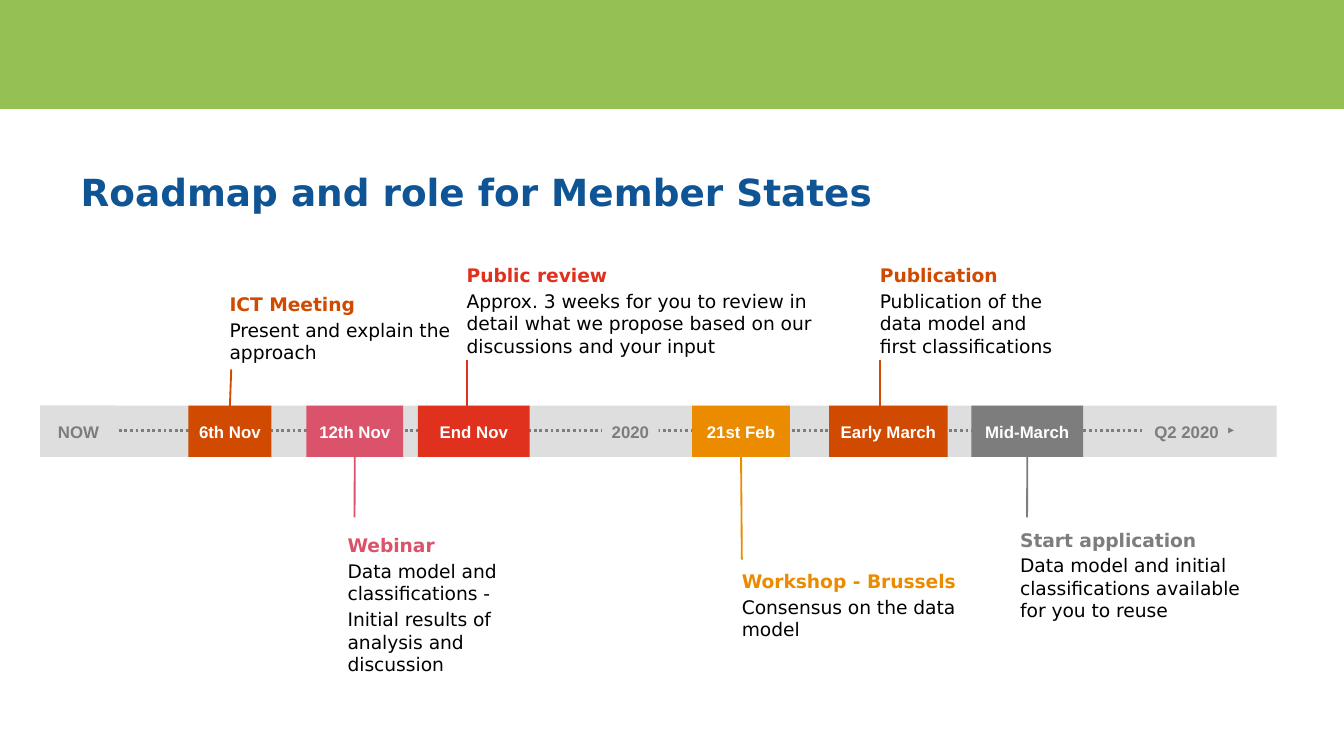
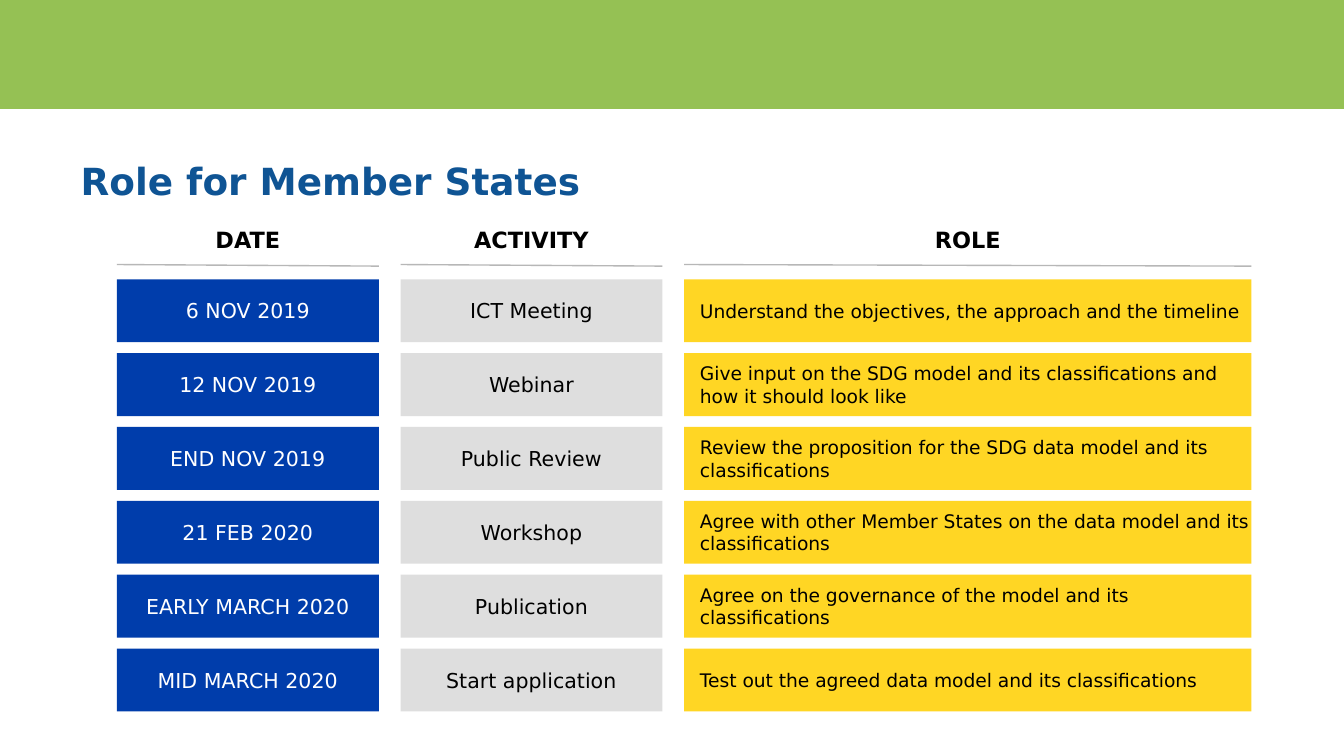
from collections import namedtuple

from lxml import etree
from pptx import Presentation
from pptx.dml.color import RGBColor
from pptx.enum import dml, shapes, text
from pptx.oxml import ns
from pptx.util import Cm, Pt

Box = namedtuple("Box", "left top width height")
Milestone = namedtuple("Milestone", "date left width colour stem tip heading lines note")

GREEN, TITLE_BLUE, NAVY, YELLOW = "95C154", "0F5494", "003DAB", "FFD624"
PALE, GREY, RULE, BLACK, WHITE = "DEDEDE", "7D7D7D", "B7B7B7", "000000", "FFFFFF"
ORANGE, PINK, RED, AMBER = "D04A02", "DB536A", "E0301E", "EB8C00"
BODY_FONT, DATE_FONT = "DejaVu Sans", "Arial"
LEFT, CENTER = text.PP_ALIGN.LEFT, text.PP_ALIGN.CENTER

PERIODS = [("NOW", 0, 1.45, 0), ("2020", 10.62, 1.07, 0.16), ("Q2 2020", 20.88, 1.57, 0.16)]

# Lengths in cm; stems, tips and notes are placed from the slide's corner.
MILESTONES = [
    Milestone("6th Nov", 3.56, 1.57, ORANGE, 4.37, 6.98, "ICT Meeting",
              ["Present and explain the approach"], Box(4.34, 5.54, 4.19, 1.17)),
    Milestone("12th Nov", 5.79, 1.83, PINK, 6.7, 9.78, "Webinar",
              ["Data model and classifications -",
               "Initial results of analysis and discussion"], Box(6.57, 10.1, 3.45, 2.31)),
    Milestone("End Nov", 7.9, 2.11, RED, 8.82, 6.81, "Public review",
              ["Approx. 3 weeks for you to review in detail what we propose "
               "based on our discussions and your input"], Box(8.82, 4.99, 6.6, 1.95)),
    Milestone("21st Feb", 13.08, 1.85, AMBER, 14.02, 10.58, "Workshop - Brussels",
              ["Consensus on the data model"], Box(14.02, 10.77, 4.34, 2.31)),
    Milestone("Early March", 15.67, 2.24, ORANGE, 16.63, 6.81, "Publication",
              ["Publication of the data model and first classifications"],
              Box(16.63, 4.99, 3.45, 1.55)),
    Milestone("Mid-March", 18.36, 2.11, GREY, 19.41, 9.78, "Start application",
              ["Data model and initial classifications available for you to reuse"],
              Box(19.28, 9.99, 4.52, 2.31)),
]

ROLES = [
    ("6 NOV 2019", "ICT Meeting", "Understand the objectives, the approach and the timeline"),
    ("12 NOV 2019", "Webinar",
     "Give input on the SDG model and its classifications and how it should look like"),
    ("END NOV 2019", "Public Review",
     "Review the proposition for the SDG data model and its classifications"),
    ("21 FEB 2020", "Workshop",
     "Agree with other Member States on the data model and its classifications"),
    ("EARLY MARCH 2020", "Publication",
     "Agree on the governance of the model and its classifications"),
    ("MID MARCH 2020", "Start application",
     "Test out the agreed data model and its classifications"),
]


def rgb(colour):
    return RGBColor.from_string(colour)


def lengths(box):
    return [Cm(value) for value in box]


def style(para, size, colour, bold=False, font=BODY_FONT, align=LEFT):
    para.alignment = align
    para.font.name, para.font.size, para.font.bold = font, Pt(size), bold
    para.font.color.rgb = rgb(colour)


def prepare_frame(frame, anchor, inset=0):
    """Wrap the text, anchor it and remove margins except the left inset."""
    frame.word_wrap = True
    frame.vertical_anchor = anchor
    frame.margin_left = Cm(inset)
    frame.margin_right = frame.margin_top = frame.margin_bottom = 0


def add_block(page, box, fill):
    block = page.shapes.add_shape(shapes.MSO_SHAPE.RECTANGLE, *lengths(box))
    block.shadow.inherit = False
    block.fill.solid()
    block.fill.fore_color.rgb = rgb(fill)
    block.line.fill.background()
    return block


def add_label(page, box, fill, words, size, colour, inset=0, **options):
    """A rectangle with one paragraph; without a fill, a text box."""
    label = add_block(page, box, fill) if fill else page.shapes.add_textbox(*lengths(box))
    prepare_frame(label.text_frame, text.MSO_ANCHOR.MIDDLE, inset)
    para = label.text_frame.paragraphs[0]
    para.text = words
    style(para, size, colour, **options)
    return label


def add_line(page, start, end, colour, width):
    line = page.shapes.add_connector(shapes.MSO_CONNECTOR.STRAIGHT, *lengths(start + end))
    line.line.color.rgb = rgb(colour)
    line.line.width = Pt(width)
    etree.SubElement(line.element.spPr, ns.qn("a:effectLst"))
    return line


def add_page(deck, title, title_height):
    page = deck.slides.add_slide(deck.slide_layouts[5])
    holder = page.shapes.title
    holder.left, holder.top, holder.width, holder.height = lengths(
        Box(1.27, 2.64, 22.86, title_height))
    holder.text = title
    holder.text_frame.auto_size = text.MSO_AUTO_SIZE.NONE
    holder.text_frame.vertical_anchor = text.MSO_ANCHOR.MIDDLE
    style(holder.text_frame.paragraphs[0], 20, TITLE_BLUE, bold=True)
    return page


def share_band(deck, page):
    """Draw the top band and move it to the layout behind every slide."""
    band = add_block(page, Box(0, 0, 25.4, 2.06), GREEN).element
    band.nvSpPr.cNvPr.set("id", "20")
    deck.slide_layouts[5].shapes.element.insert(2, band)


def add_note(page, milestone):
    frame = page.shapes.add_textbox(*lengths(milestone.note)).text_frame
    prepare_frame(frame, text.MSO_ANCHOR.TOP)
    heading = frame.paragraphs[0]
    heading.text = milestone.heading
    style(heading, 10, milestone.colour, bold=True)
    for words in milestone.lines:
        para = frame.add_paragraph()
        para.text = words
        para.space_before = Pt(1.7)
        style(para, 10, BLACK)


def add_milestone(page, milestone, bar):
    date = add_label(page, Box(milestone.left, bar.top, milestone.width, bar.height),
                     milestone.colour, milestone.date, 9, WHITE,
                     bold=True, font=DATE_FONT, align=CENTER)
    stem = add_line(page, (milestone.stem, bar.top + 0.3), (milestone.stem, milestone.tip),
                    milestone.colour, 1)
    centre = milestone.left + milestone.width / 2
    if abs(milestone.stem - centre) < 0.05:
        stem.begin_connect(date, 0 if milestone.tip < bar.top else 2)
    add_note(page, milestone)


def add_timeline(page, bar):
    add_block(page, bar, PALE)
    middle = bar.top + bar.height / 2 - 0.02
    axis = add_line(page, (bar.left, middle), (bar.left + 22.56, middle), GREY, 1.5)
    axis.line.dash_style = dml.MSO_LINE.ROUND_DOT
    etree.SubElement(axis.line._get_or_add_ln(), ns.qn("a:tailEnd"), type="triangle")
    for words, offset, width, inset in PERIODS:
        box = Box(bar.left + offset, bar.top + inset, width, bar.height - 2 * inset)
        add_label(page, box, PALE, words, 9, GREY, bold=True, font=DATE_FONT, align=CENTER)
    for milestone in MILESTONES:
        add_milestone(page, milestone, bar)


def add_role_column(page, box, heading, entries, fill, **options):
    """A heading, a thin rule and evenly spaced cells."""
    right, rule = box.left + box.width, box.top + 1.14
    add_label(page, Box(box.left, box.top, box.width, 1.32), None, heading, 12, BLACK,
              bold=True, align=CENTER)
    add_line(page, (box.left, rule), (right, rule + 0.03), RULE, 0.75)
    cell_height, first = 1.19, box.top + 1.42
    step = (box.top + box.height - cell_height - first) / (len(entries) - 1)
    for row, words in enumerate(entries):
        cell = Box(box.left, first + row * step, box.width, cell_height)
        add_label(page, cell, fill, words, **options)


def add_role_columns(page, area):
    dates, activities, roles = zip(*ROLES)
    columns = [
        ("DATE", dates, 4.95, NAVY, dict(size=11, colour=WHITE, align=CENTER)),
        ("ACTIVITY", activities, 4.95, PALE, dict(size=11, colour=BLACK, align=CENTER)),
        ("ROLE", roles, 10.72, YELLOW, dict(size=10, colour=BLACK, inset=0.3)),
    ]
    gap = (area.width - sum(column[2] for column in columns)) / (len(columns) - 1)
    left = area.left
    for heading, entries, width, fill, options in columns:
        box = Box(left, area.top, width, area.height)
        add_role_column(page, box, heading, entries, fill, **options)
        left += width + gap


def main():
    deck = Presentation()
    deck.slide_width, deck.slide_height = Cm(25.4), Cm(14.29)
    roadmap = add_page(deck, "Roadmap and role for Member States", 1.96)
    share_band(deck, roadmap)
    add_timeline(roadmap, Box(0.76, 7.67, 23.37, 0.97))
    roles = add_page(deck, "Role for Member States", 1.55)
    add_role_columns(roles, Box(2.21, 3.86, 21.44, 9.59))
    deck.save("out.pptx")


if __name__ == "__main__":
    main()
